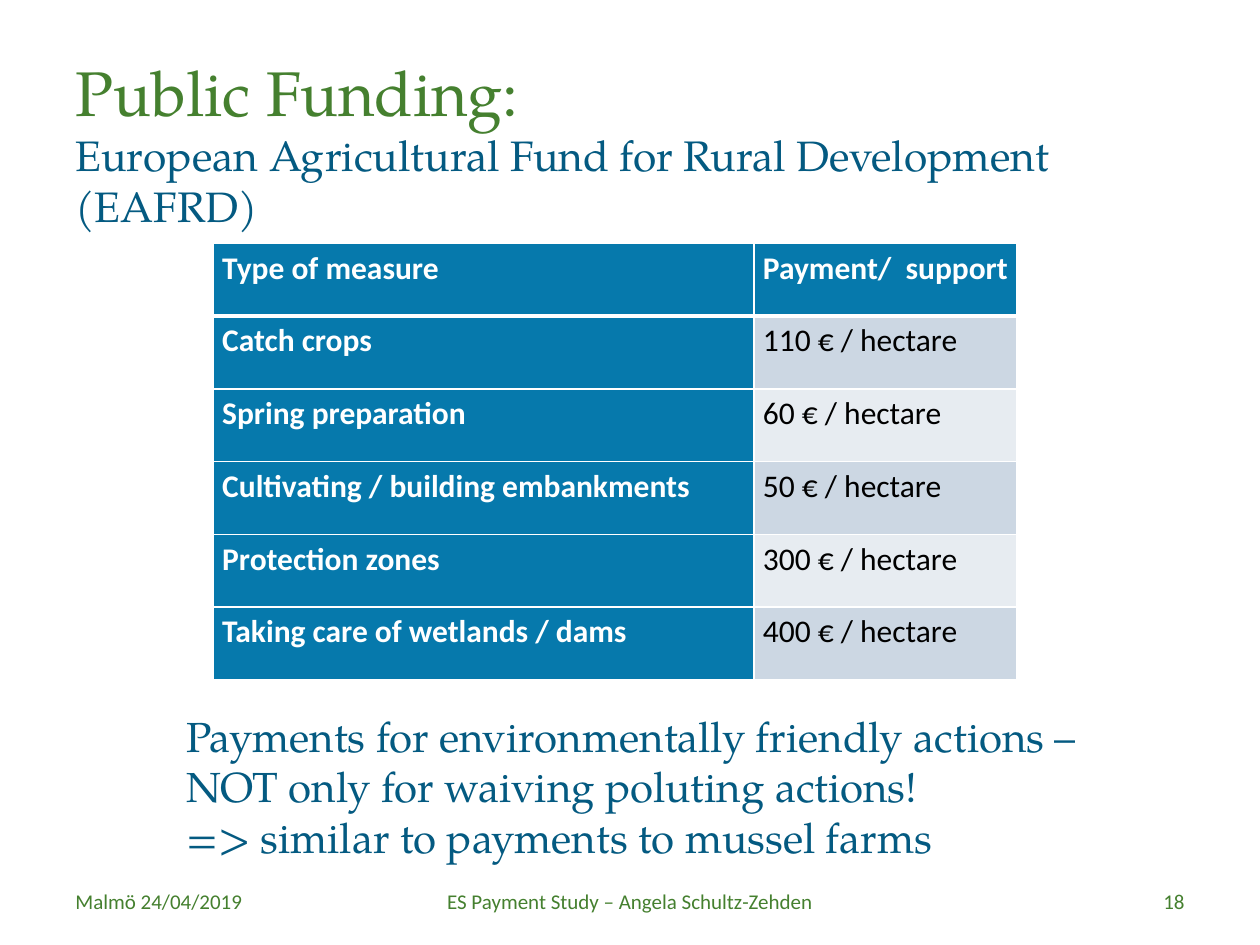
from lxml.etree import SubElement
from pptx import Presentation
from pptx.dml.color import RGBColor
from pptx.enum.text import MSO_ANCHOR, PP_ALIGN
from pptx.oxml.ns import qn
from pptx.util import Pt

SERIF, SANS = "TeX Gyre Pagella", "Calibri"
GREEN, NAVY, BLUE, WHITE, BLACK = "45802F", "045A81", "0679AC", "FFFFFF", "000000"
BANDS = ("CCD7E3", "E7ECF1")
MEASURES = [
    ("Type of measure", "Payment/ support "),
    ("Catch crops", "110 € / hectare"),
    ("Spring preparation", "60 € / hectare"),
    ("Cultivating / building embankments", "50 € / hectare"),
    ("Protection zones", "300 € / hectare"),
    ("Taking care of wetlands / dams", "400 € / hectare"),
]


def rgb(color):
    return RGBColor.from_string(color)


def set_font(font, name, size, color, bold=False):
    font.name, font.size, font.bold = name, Pt(size), bold
    font.color.rgb = rgb(color)


def add_text(slide, box, paragraphs, name, anchor=MSO_ANCHOR.TOP, align=PP_ALIGN.LEFT):
    tf = slide.shapes.add_textbox(*map(Pt, box)).text_frame
    tf.word_wrap = True
    tf.vertical_anchor = anchor
    for i, (text, size, color) in enumerate(paragraphs):
        p = tf.add_paragraph() if i else tf.paragraphs[0]
        p.text = text
        p.alignment = align
        set_font(p.font, name, size, color)


def add_border(cell, side, width):
    ln = SubElement(cell._tc.get_or_add_tcPr(), qn(f"a:ln{side}"), w=str(Pt(width)))
    fill = SubElement(ln, qn("a:solidFill"))
    SubElement(fill, qn("a:srgbClr"), val=WHITE)


def fill_cell(cell, text, row, col):
    strong = row == 0 or col == 0
    for side in "LRTB":
        thick = (row, side) in ((0, "B"), (1, "T"))
        add_border(cell, side, 3 if thick else 1)
    cell.fill.solid()
    cell.fill.fore_color.rgb = rgb(BLUE if strong else BANDS[(row - 1) % 2])
    cell.margin_left = cell.margin_right = Pt(5)
    cell.margin_top = cell.margin_bottom = 0
    p = cell.text_frame.paragraphs[0]
    p.text = text
    p.alignment = PP_ALIGN.LEFT if text.startswith("Cultivating") else PP_ALIGN.JUSTIFY
    p.line_spacing = 1.15
    set_font(p.font, SANS, 18, WHITE if strong else BLACK, strong)


def add_measures(slide):
    frame = slide.shapes.add_table(len(MEASURES), 2, Pt(122), Pt(139), Pt(459), Pt(249.6))
    table = frame.table
    for column, width in zip(table.columns, (309, 150)):
        column.width = Pt(width)
    for r, values in enumerate(MEASURES):
        table.rows[r].height = Pt(41.6)
        for c, text in enumerate(values):
            fill_cell(table.cell(r, c), text, r, c)


def add_footer(slide, left, width, text, align):
    add_text(slide, (left, 500.5, width, 28.8), [(text, 12, GREEN)],
             SANS, MSO_ANCHOR.MIDDLE, align)


def main():
    prs = Presentation()
    prs.slide_width, prs.slide_height = Pt(720), Pt(540)
    slide = prs.slides.add_slide(prs.slide_layouts[6])
    add_text(slide, (36, 26.8, 648, 108), [
        ("Public Funding:", 36, GREEN),
        ("European Agricultural Fund for Rural Development (EAFRD)", 24.3, NAVY),
    ], SERIF)
    add_measures(slide)
    add_text(slide, (99.3, 402.5, 636, 94), [
        ("Payments for environmentally friendly actions –\v"
         "NOT only for waiving poluting actions!", 24, NAVY),
        ("=> similar to payments to mussel farms", 24, NAVY),
    ], SERIF)
    add_footer(slide, 36, 168, "Malmö 24/04/2019", PP_ALIGN.LEFT)
    add_footer(slide, 246, 228, "ES Payment Study – Angela Schultz-Zehden", PP_ALIGN.CENTER)
    add_footer(slide, 516, 168, "18", PP_ALIGN.RIGHT)
    prs.save("out.pptx")


if __name__ == "__main__":
    main()
